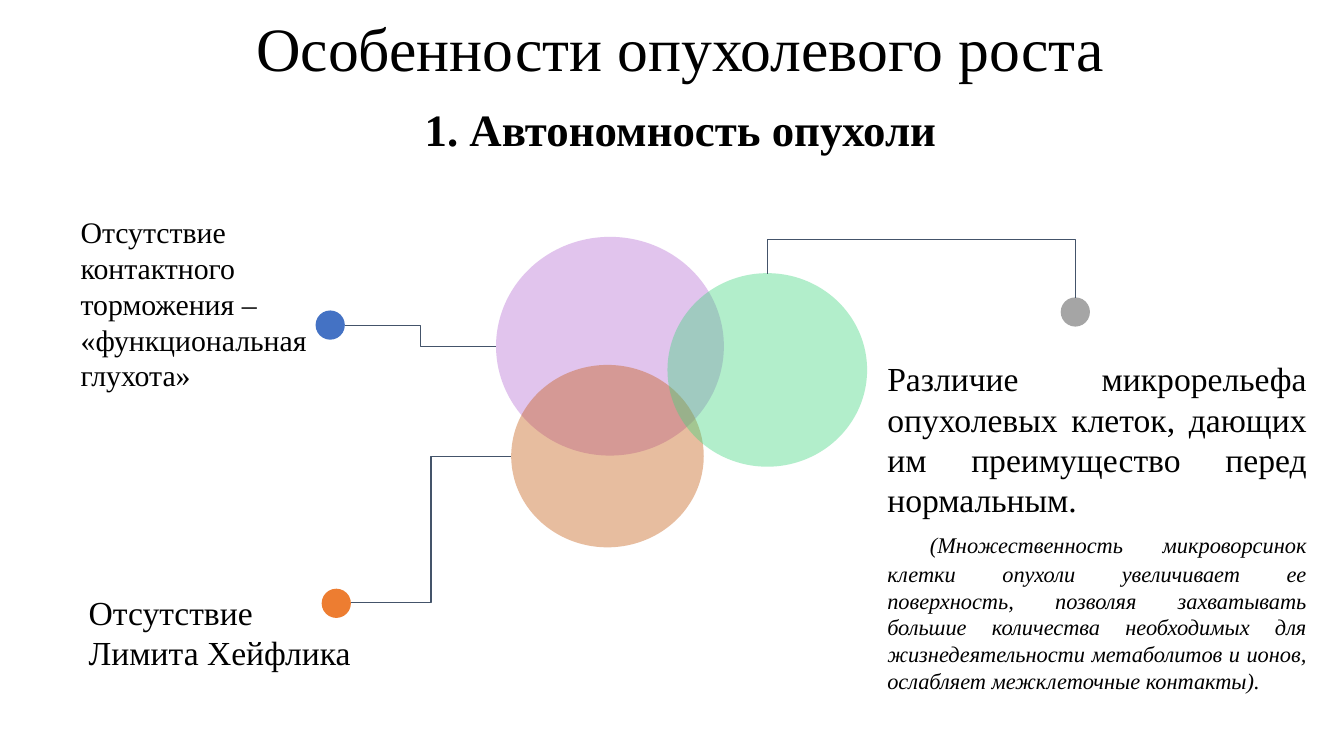
"""Build the slide on tumour growth: three overlapping circles with callouts."""
from lxml import etree
from pptx import Presentation
from pptx.dml.color import RGBColor
from pptx.enum.shapes import MSO_CONNECTOR, MSO_SHAPE
from pptx.enum.text import MSO_ANCHOR, PP_ALIGN
from pptx.oxml.ns import qn
from pptx.util import Pt

PX = 9144
OVAL = MSO_SHAPE.OVAL
ELBOW = MSO_CONNECTOR.ELBOW
MIDDLE = MSO_ANCHOR.MIDDLE
LEFT, CENTER, JUSTIFY = PP_ALIGN.LEFT, PP_ALIGN.CENTER, PP_ALIGN.JUSTIFY


def px(*sizes):
    return [size * PX for size in sizes]


def color(code):
    return RGBColor.from_string(code)


deck = Presentation()
deck.slide_width, deck.slide_height = px(1333, 750)
slide = deck.slides.add_slide(deck.slide_layouts[6])
shapes = slide.shapes

DOT = 29
circles = [
    (492, 235, 226, 217, "B56DD3", 40),
    (507, 362, 191, 181, "C55A11", 40),
    (662, 271, 198, 192, "3FD57E", 40),
    (1052, 295, DOT, DOT, "A5A5A5", 100),
    (319, 584, DOT, DOT, "ED7D31", 100),
    (313, 308, DOT, DOT, "4472C4", 100),
]
for left, top, width, height, code, alpha in circles:
    circle = shapes.add_shape(OVAL, *px(left, top, width, height))
    circle.shadow.inherit = False
    circle.line.fill.background()
    circle.fill.solid()
    circle.fill.fore_color.rgb = color(code)
    if alpha < 100:
        tint = circle.fill._xPr.find(".//" + qn("a:srgbClr"))
        etree.SubElement(tint, qn("a:alpha")).set("val", str(alpha * 1000))

links = [
    ((342, 323, 492, 344), 0, 0.5),
    ((348, 598, 507, 453), 0, 0.5),
    ((902, 436, 926, 131), 270, 2.4),
]
for ends, turn, bend in links:
    link = shapes.add_connector(ELBOW, *px(*ends))
    link.line.color.rgb = color("44546A")
    link.line.width = Pt(0.75)
    props = link._element.spPr
    props.find(qn("a:xfrm")).set("rot", str(turn * 60000))
    guide = etree.SubElement(props.find(".//" + qn("a:avLst")), qn("a:gd"))
    guide.set("name", "adj1")
    guide.set("fmla", f"val {round(bend * 100000)}")
    etree.SubElement(props, qn("a:effectLst"))

big = {"size": Pt(24)}
note = {"size": Pt(16), "italic": True}
labels = [
    ((75, 24, 1200, 54), CENTER, 0.9, [
        [("Особенности опухолевого роста", {"size": Pt(44)})]]),
    ((75, 104, 1200, 54), CENTER, 0.9, [
        [("1. Автономность опухоли", {"size": Pt(32), "bold": True})]]),
    ((67, 235, 301, 132), LEFT, 1.0, [
        [("Отсутствие контактного торможения – «функциональная глухота»",
          {"size": Pt(21.3)})]]),
    ((75, 570, 293, 114), LEFT, 1.0, [
        [("Отсутствие", big)],
        [("Лимита Хейфлика", big)]]),
    ((867, 319, 442, 406), JUSTIFY, 1.0, [
        [("Различие микрорельефа опухолевых клеток, дающих им "
          "преимущество перед нормальным.", big)],
        [(" ", big),
         ("(Множественность микроворсинок клетки опухоли увеличивает ее "
          "поверхность, позволяя захватывать большие количества необходимых "
          "для жизнедеятельности метаболитов и ионов, ослабляет "
          "межклеточные контакты).", note)]]),
]
for place, align, space, lines in labels:
    frame = shapes.add_textbox(*px(*place)).text_frame
    frame.word_wrap = True
    frame.vertical_anchor = MIDDLE
    for side in ("left", "top", "right", "bottom"):
        setattr(frame, "margin_" + side, 13 * PX)
    for row, parts in enumerate(lines):
        para = frame.add_paragraph() if row else frame.paragraphs[0]
        para.alignment = align
        para.line_spacing = space
        for text, style in parts:
            run = para.add_run()
            run.text = text
            run.font.name = "Times New Roman"
            run.font.color.rgb = color("000000")
            for key, value in style.items():
                setattr(run.font, key, value)

deck.save("out.pptx")
